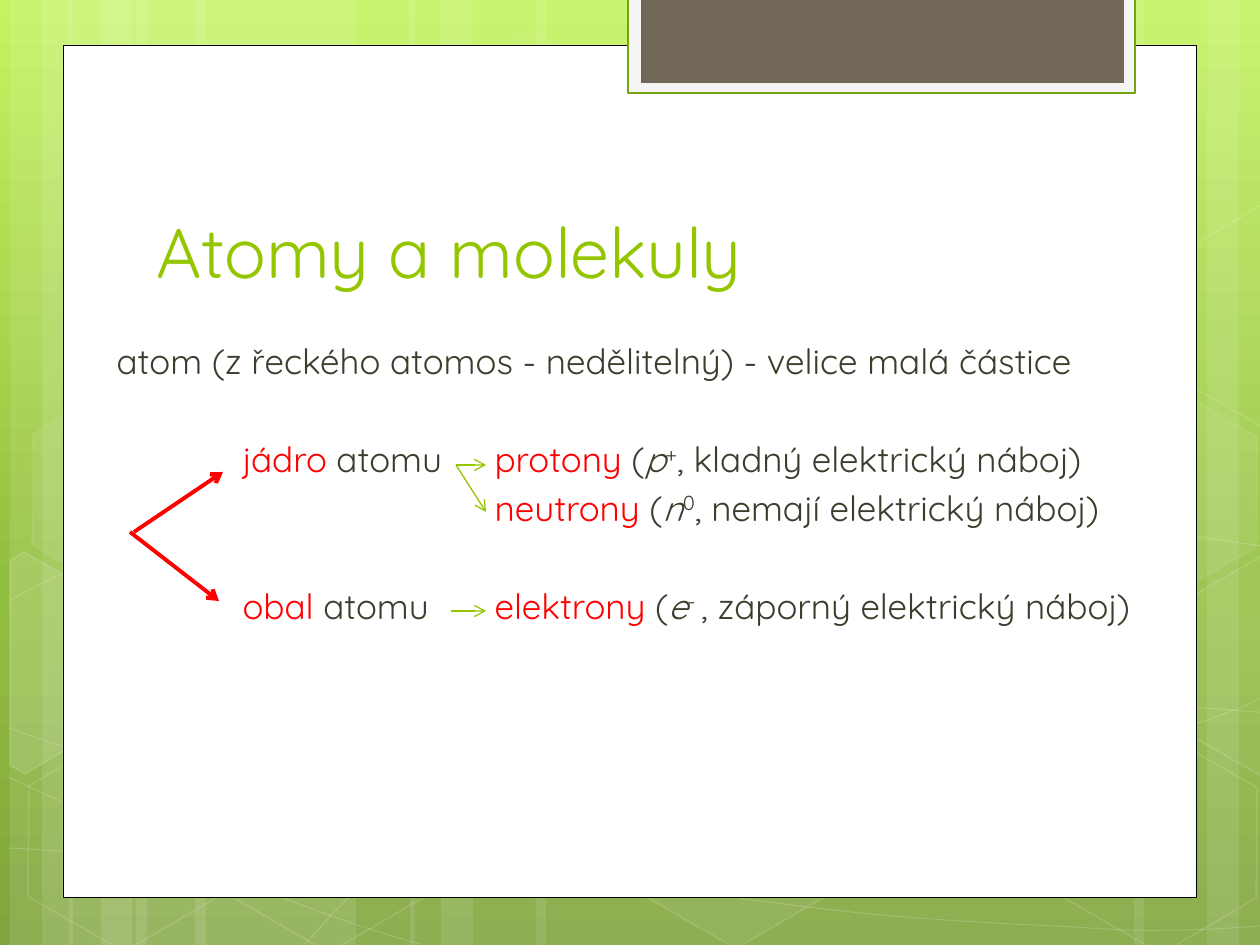
from lxml import etree
from pptx import Presentation
from pptx.dml.color import RGBColor
from pptx.enum.shapes import MSO_CONNECTOR, MSO_SHAPE
from pptx.enum.text import MSO_ANCHOR, MSO_AUTO_SIZE, PP_ALIGN
from pptx.oxml import parse_xml
from pptx.oxml.ns import nsdecls, qn
from pptx.util import Pt

RECTANGLE, HEXAGON = MSO_SHAPE.RECTANGLE, MSO_SHAPE.HEXAGON
STRAIGHT = MSO_CONNECTOR.STRAIGHT
LEFT, TOP, BOTTOM = PP_ALIGN.LEFT, MSO_ANCHOR.TOP, MSO_ANCHOR.BOTTOM
NO_FIT = MSO_AUTO_SIZE.NONE

WHITE = RGBColor(0xFF, 0xFF, 0xFF)
BLACK = RGBColor(0, 0, 0)
RED = RGBColor(0xFF, 0, 0)
LIME = RGBColor(0x94, 0xC6, 0x00)
INK = RGBColor(0x3E, 0x3D, 0x2D)
PALE = RGBColor(0xF5, 0xF5, 0xF5)
FRAME = RGBColor(0x74, 0xA5, 0x10)
TAUPE = RGBColor(0x71, 0x68, 0x5A)
SKY = ((0, RGBColor(0xC3, 0xF3, 0x5F)), (62, RGBColor(0x93, 0xBF, 0x3F)),
       (100, RGBColor(0x81, 0xA5, 0x3E)))

FONT = "Quicksand"
PX = 914400 / 126
PAGE = (0, 0, 1260, 945)
PANEL = (63, 45, 1134, 853)
TAB = (628, -3, 507, 96)
TITLE = (144, 141, 968, 158)
BODY = (104, 333, 1081, 484)

STRIPES = ((136, 220), (10, 63), (42, 105), (195, 220), (69, 63), (101, 105),
           (924, 220), (1207, 63), (1134, 105), (536, 388), (410, 63), (441, 105))
CURVES = (
    ((9, 848), (77, 852), (145, 856), (239, 854), (334, 853), (451, 851), (577, 838),
     (703, 825), (882, 801), (998, 777), (1113, 753), (1231, 716), (1269, 694)),
    ((9, 601), (45, 581), (82, 562), (152, 543), (224, 523), (326, 496), (437, 488),
     (549, 479), (685, 478), (824, 488), (963, 497), (1193, 537), (1269, 547)),
    ((8, 777), (160, 847), (311, 916), (421, 944)),
    ((9, 728), (48, 742), (88, 756), (161, 776), (234, 795), (344, 827), (450, 848),
     (554, 869), (687, 892), (791, 905), (896, 919), (1008, 924), (1075, 927),
     (1140, 932), (1159, 930), (1191, 930), (1223, 929), (1246, 927), (1269, 925)),
    ((305, 944), (328, 919), (350, 893), (381, 871), (411, 848), (454, 823), (489, 805),
     (524, 788), (546, 780), (592, 767), (638, 754), (722, 737), (766, 728),
     (811, 719), (818, 719), (857, 717), (896, 713), (958, 709), (1000, 708),
     (1045, 707), (1116, 708), (1116, 708), (1144, 708), (1173, 708), (1201, 708),
     (1223, 709), (1245, 711), (1256, 712), (1268, 713), (1264, 712), (1268, 713)))
HEXAGONS = ((421, 45, 4, 8), (626, 742, 6, 12), (14, 745, 0, 12), (18, 393, 7, 8),
            (219, 746, 0, 12), (949, 571, 10, 12), (1051, 747, 0, 12), (1051, 396, 7, 8))
CUT_HEXAGONS = (
    (((10, 561), (24, 552), (121, 607), (120, 718), (25, 774), (10, 765)), 10),
    (((1167, 611), (1261, 556), (1271, 562), (1271, 772), (1263, 777), (1167, 722)), 4),
    (((1167, 261), (1261, 205), (1273, 212), (1271, 422), (1263, 427), (1167, 372)), 0))

KEY, PLAIN = {"color": RED}, {}
SYMBOL, RAISED = {"italic": True}, {"baseline": 30000}
LINES = (
    (0, (("atom (z řeckého atomos - nedělitelný) - velice malá částice", PLAIN),)),
    (32, (("\tjádro ", KEY), ("atomu\t", PLAIN), ("protony ", KEY), ("(", PLAIN),
          ("p", SYMBOL), ("+", RAISED), (", kladný elektrický náboj)", PLAIN))),
    (4, (("\t\t\tneutrony ", KEY), ("(", PLAIN), ("n", SYMBOL), ("0", RAISED),
         (", nemají elektrický náboj)", PLAIN))),
    (32, (("\tobal ", KEY), ("atomu\t", PLAIN), ("elektrony ", KEY), ("(", PLAIN),
          ("e", SYMBOL), ("- ", RAISED), (", záporný elektrický náboj)", PLAIN))))
ARROWS = ((30, 199, 119, 139, RED, 2.25), (26, 199, 115, 268, RED, 2.25),
          (352, 132, 382, 132, LIME, 0.75), (352, 132, 382, 179, LIME, 0.75),
          (347, 278, 382, 278, LIME, 0.75))


def emu(*lengths):
    """Turn px lengths into EMU."""
    return [round(length * PX) for length in lengths]


def fade(parent, percent):
    """Give the solid fill under an element an opacity."""
    color = parent.find(qn("a:solidFill")).find(qn("a:srgbClr"))
    etree.SubElement(color, qn("a:alpha")).set("val", str(percent * 1000))


def paint(shape, fill=None, line=None, width=1, fill_alpha=100, line_alpha=100):
    """Set fill and outline, with opacity in percent."""
    shape.shadow.inherit = False
    properties = shape.element.spPr
    if fill is None:
        shape.fill.background()
    else:
        shape.fill.solid()
        shape.fill.fore_color.rgb = fill
        if fill_alpha < 100:
            fade(properties, fill_alpha)
    if line is None:
        shape.line.fill.background()
    else:
        shape.line.color.rgb = line
        shape.line.width = Pt(width)
        if line_alpha < 100:
            fade(properties.find(qn("a:ln")), line_alpha)


def add_outline(page, box, points, close):
    """Draw straight segments through points relative to the box."""
    placed = [(box[0] + x, box[1] + y) for x, y in points]
    builder = page.shapes.build_freeform(*placed[0], scale=PX)
    builder.add_line_segments(placed[1:], close=close)
    return builder.convert_to_shape()


def add_curve(page, box, knots):
    """Draw a chain of cubic curves through knots relative to the box."""
    curve = add_outline(page, box, knots, False)
    segments = list(curve.element.iter(qn("a:lnTo")))
    for start in range(0, len(segments), 3):
        first, *others = segments[start:start + 3]
        cubic = etree.Element(qn("a:cubicBezTo"))
        first.addprevious(cubic)
        for segment in (first, *others):
            cubic.append(segment[0])
            segment.getparent().remove(segment)
    return curve


def add_backdrop(page, box):
    """Build the gradient with its stripes, curves and hexagons."""
    stops = "".join(f'<a:gs pos="{at * 1000}"><a:srgbClr val="{color}"/></a:gs>'
                    for at, color in SKY)
    page.element.cSld.insert(0, parse_xml(
        f'<p:bg {nsdecls("p", "a")}><p:bgPr><a:gradFill><a:gsLst>{stops}</a:gsLst>'
        '<a:lin ang="5400000" scaled="0"/></a:gradFill><a:effectLst/></p:bgPr></p:bg>'))
    left, top, _, height = box
    for x, width in STRIPES:
        stripe = page.shapes.add_shape(RECTANGLE, *emu(left + x, top, width, height))
        paint(stripe, WHITE, fill_alpha=10)
    for knots in CURVES:
        paint(add_curve(page, box, knots), None, WHITE, 0.5, line_alpha=20)
    for x, y, fill_alpha, line_alpha in HEXAGONS:
        hexagon = page.shapes.add_shape(HEXAGON, *emu(left + x, top + y, 220, 192))
        hexagon.rotation = 30
        hexagon.adjustments[0], hexagon.adjustments[1] = 0.285, 1.155
        paint(hexagon, WHITE if fill_alpha else None, WHITE, 1, fill_alpha, line_alpha)
    for points, fill_alpha in CUT_HEXAGONS:
        paint(add_outline(page, box, points, True),
              WHITE if fill_alpha else None, WHITE, 1, fill_alpha, 12)


def add_panel(page, panel, tab):
    """Build the white panel and the framed tab above it."""
    left, top, width, height = tab
    inner = (left + 13, top, width - 24, height - 10)
    for box, style in ((panel, (WHITE, BLACK, 0.5)), (tab, (PALE, FRAME, 1.25)),
                       (inner, (TAUPE,))):
        paint(page.shapes.add_shape(RECTANGLE, *emu(*box)), *style)


def place_text(page, holder, box, anchor):
    """Bring a placeholder to the front, fit it to the box and return its frame."""
    page.shapes.element.append(holder.element)
    holder.left, holder.top, holder.width, holder.height = emu(*box)
    frame = holder.text_frame
    for name, value in {"word_wrap": True, "auto_size": NO_FIT,
                        "vertical_anchor": anchor}.items():
        setattr(frame, name, value)
    return frame


def add_span(para, text, size, color=INK, baseline=0, italic=False):
    """Add one run of formatted text."""
    span = para.add_run()
    span.text = text
    for name, value in {"name": FONT, "size": Pt(size), "italic": italic}.items():
        setattr(span.font, name, value)
    span.font.color.rgb = color
    if baseline:
        span._r.get_or_add_rPr().set("baseline", str(baseline))


def add_title(page, box):
    """Write the slide title."""
    para = place_text(page, page.shapes.title, box, BOTTOM).paragraphs[0]
    para.alignment = LEFT
    add_span(para, "Atomy a molekuly", 40, LIME)


def add_body(page, box):
    """Write the parts of the atom and the arrows that link them."""
    frame = place_text(page, page.placeholders[1], box, TOP)
    for index, (space, spans) in enumerate(LINES):
        para = frame.add_paragraph() if index else frame.paragraphs[0]
        para.alignment, para.space_before = LEFT, Pt(space)
        properties = para._p.get_or_add_pPr()
        for name, value in {"marL": "0", "indent": "0", "defTabSz": "914400"}.items():
            properties.set(name, value)
        etree.SubElement(properties, qn("a:buNone"))
        for text, style in spans:
            add_span(para, text, 20, **style)
    left, top = box[:2]
    for x1, y1, x2, y2, color, width in ARROWS:
        arrow = page.shapes.add_connector(
            STRAIGHT, *emu(left + x1, top + y1, left + x2, top + y2))
        arrow.line.color.rgb, arrow.line.width = color, Pt(width)
        properties = arrow.element.spPr
        etree.SubElement(properties.find(qn("a:ln")), qn("a:tailEnd"), type="arrow")
        etree.SubElement(properties, qn("a:effectLst"))


def main():
    """Build and save the deck."""
    deck = Presentation()
    deck.slide_width, deck.slide_height = emu(*PAGE[2:])
    page = deck.slides.add_slide(deck.slide_layouts[1])
    add_backdrop(page, PAGE)
    add_panel(page, PANEL, TAB)
    add_title(page, TITLE)
    add_body(page, BODY)
    deck.save("out.pptx")


if __name__ == "__main__":
    main()
